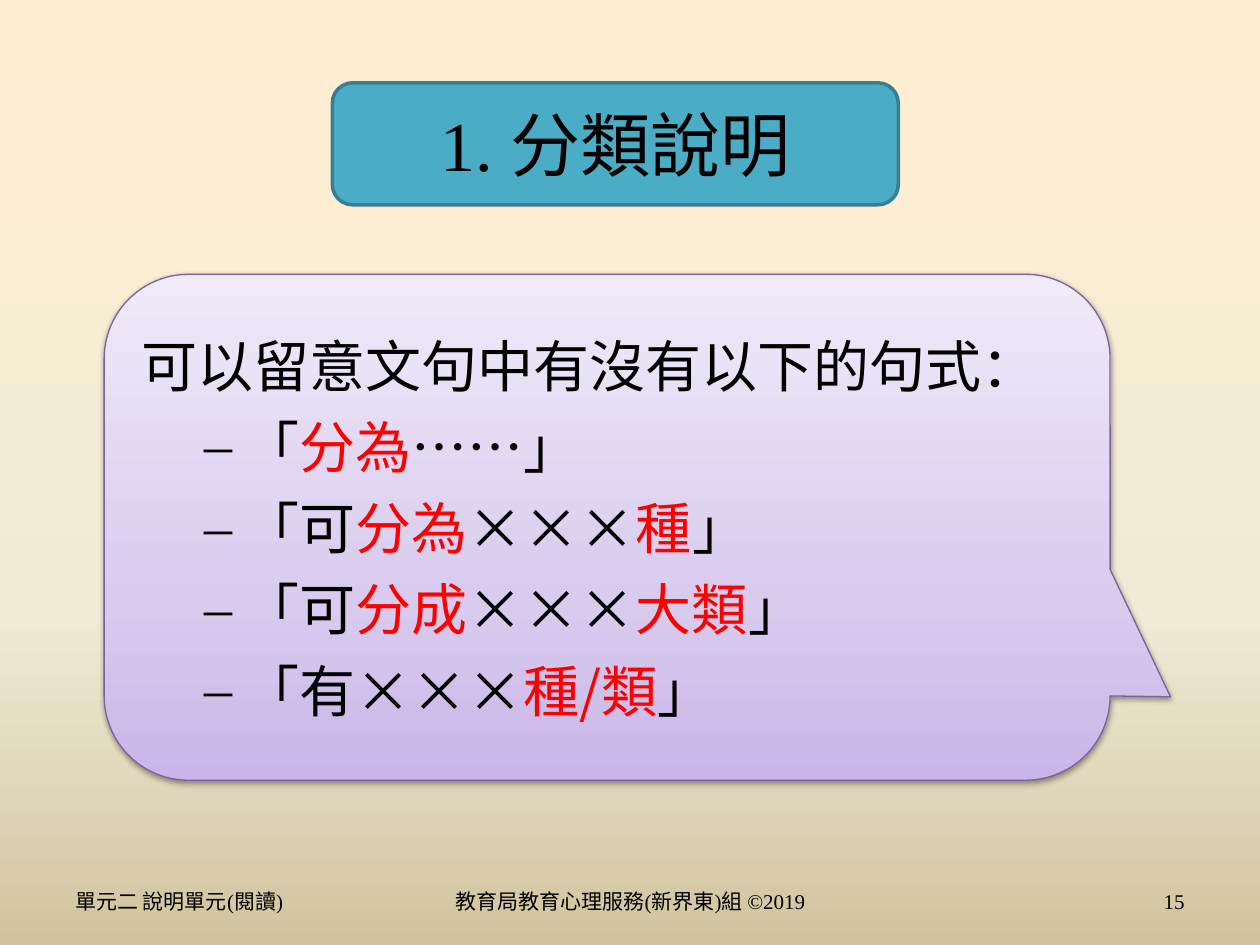
from dataclasses import dataclass

from lxml import etree
from pptx import Presentation
from pptx import util as u
from pptx.dml.color import RGBColor
from pptx.enum import shapes, text
from pptx.oxml.ns import qn

COLOURS = {
    "text": "000000", "key": "FF0000",
    "title_fill": "4BACC6", "title_line": "377F92", "callout_line": "7D60A0",
}
BACKGROUND_STOPS = [(0, "FFEFD1"), (65, "F0EBD5"), (100, "D1C39F")]
CALLOUT_STOPS = [(0, "C9B5E8"), (35, "D8CBEE"), (100, "F0EAF9")]
SERIF, SANS = "Times New Roman", "Noto Sans CJK SC"


@dataclass
class Box:
    left: float
    top: float
    width: float
    height: float

    def lengths(self):
        return [u.Cm(n) for n in (self.left, self.top, self.width, self.height)]


@dataclass
class Footer:
    wording: str
    box: Box
    align: text.PP_ALIGN


FOOTERS = [
    Footer("單元二 說明單元(閱讀)", Box(1.27, 17.65, 5.93, 1.02), text.PP_ALIGN.LEFT),
    Footer("教育局教育心理服務(新界東)組 ©2019", Box(8.69, 17.65, 8.04, 1.02),
           text.PP_ALIGN.CENTER),
    Footer("15", Box(18.2, 17.65, 5.93, 1.02), text.PP_ALIGN.RIGHT),
]
INTRODUCTION = "可以留意文句中有沒有以下的句式："
# Every second part of a pattern is a key word
PATTERNS = [
    ("「", "分為", "……」"),
    ("「可", "分為", "×××", "種", "」"),
    ("「可", "分成", "×××", "大類", "」"),
    ("「有×××", "種/類", "」"),
]


def colour(name: str) -> RGBColor:
    return RGBColor.from_string(COLOURS[name])


def style_run(run, size: float, latin: str = SERIF, tint: str = "text") -> None:
    run.font.size = u.Pt(size)
    run.font.color.rgb = colour(tint)
    run.font.name = latin
    east_asian = etree.SubElement(run.font._element, qn("a:ea"))
    east_asian.set("typeface", SANS)


def set_gradient(fill, owner, stops: list, angle: float) -> None:
    fill.gradient()
    fill.gradient_angle = angle
    stop_list = next(owner.iter(qn("a:gsLst")))
    for old_stop in list(stop_list):
        stop_list.remove(old_stop)
    for position, value in stops:
        stop = etree.SubElement(stop_list, qn("a:gs"), pos=str(position * 1000))
        etree.SubElement(stop, qn("a:srgbClr"), val=value)


def add_shape(slide, kind, box: Box, line: str, width: float):
    shape = slide.shapes.add_shape(kind, *box.lengths())
    shape.shadow.inherit = False
    shape.line.color.rgb = colour(line)
    shape.line.width = u.Pt(width)
    shape.text_frame.word_wrap = True
    shape.text_frame.vertical_anchor = text.MSO_ANCHOR.MIDDLE
    return shape


def write_line(paragraph, wording: str, size: float, align) -> None:
    paragraph.text = wording
    paragraph.alignment = align
    style_run(paragraph.runs[0], size)


def add_footer(slide, footer: Footer) -> None:
    frame = slide.shapes.add_textbox(*footer.box.lengths()).text_frame
    frame.word_wrap = True
    frame.vertical_anchor = text.MSO_ANCHOR.MIDDLE
    write_line(frame.paragraphs[0], footer.wording, 12, footer.align)


def add_pattern(frame, parts: tuple) -> None:
    paragraph = frame.add_paragraph()
    paragraph.level = 1
    paragraph.alignment = text.PP_ALIGN.LEFT
    paragraph.space_before = u.Pt(8)
    properties = paragraph._p.get_or_add_pPr()
    properties.set("marL", str(u.Cm(2.06)))
    properties.set("indent", str(u.Cm(-0.79)))
    etree.SubElement(properties, qn("a:buFont"), typeface=SERIF)
    etree.SubElement(properties, qn("a:buChar"), char="–")
    for index, part in enumerate(parts):
        run = paragraph.add_run()
        run.text = part
        style_run(run, 32, SANS, "key" if index % 2 else "text")


def add_soft_shadow(shape) -> None:
    effects = shape._element.spPr.find(qn("a:effectLst"))
    shadow = etree.SubElement(effects, qn("a:outerShdw"), blurRad=str(u.Pt(3.1)),
                              dist=str(u.Pt(1.6)), dir="5400000", rotWithShape="0")
    black = etree.SubElement(shadow, qn("a:srgbClr"), val=COLOURS["text"])
    etree.SubElement(black, qn("a:alpha"), val="38000")


def main() -> None:
    presentation = Presentation()
    presentation.slide_width, presentation.slide_height = u.Cm(25.4), u.Cm(19.05)
    slide = presentation.slides.add_slide(presentation.slide_layouts[6])
    set_gradient(slide.background.fill, slide.element, BACKGROUND_STOPS, 270)

    # Footer row
    for footer in FOOTERS:
        add_footer(slide, footer)

    # Title
    title = add_shape(slide, shapes.MSO_SHAPE.ROUNDED_RECTANGLE,
                      Box(6.7, 1.67, 11.41, 2.46), "title_line", 2)
    title.fill.solid()
    title.fill.fore_color.rgb = colour("title_fill")
    write_line(title.text_frame.paragraphs[0], "1. 分類說明", 40, text.PP_ALIGN.CENTER)

    # Callout with sentence patterns
    callout = add_shape(slide, shapes.MSO_SHAPE.ROUNDED_RECTANGULAR_CALLOUT,
                        Box(2.1, 5.53, 20.28, 10.2), "callout_line", 0.75)
    for index, value in enumerate((0.56, 0.335, 0.167)):
        callout.adjustments[index] = value
    set_gradient(callout.fill, callout._element, CALLOUT_STOPS, 90)
    add_soft_shadow(callout)
    frame = callout.text_frame
    write_line(frame.paragraphs[0], INTRODUCTION, 32, text.PP_ALIGN.LEFT)
    frame.paragraphs[0].space_before = u.Pt(3)
    for parts in PATTERNS:
        add_pattern(frame, parts)

    presentation.save("out.pptx")


if __name__ == "__main__":
    main()
